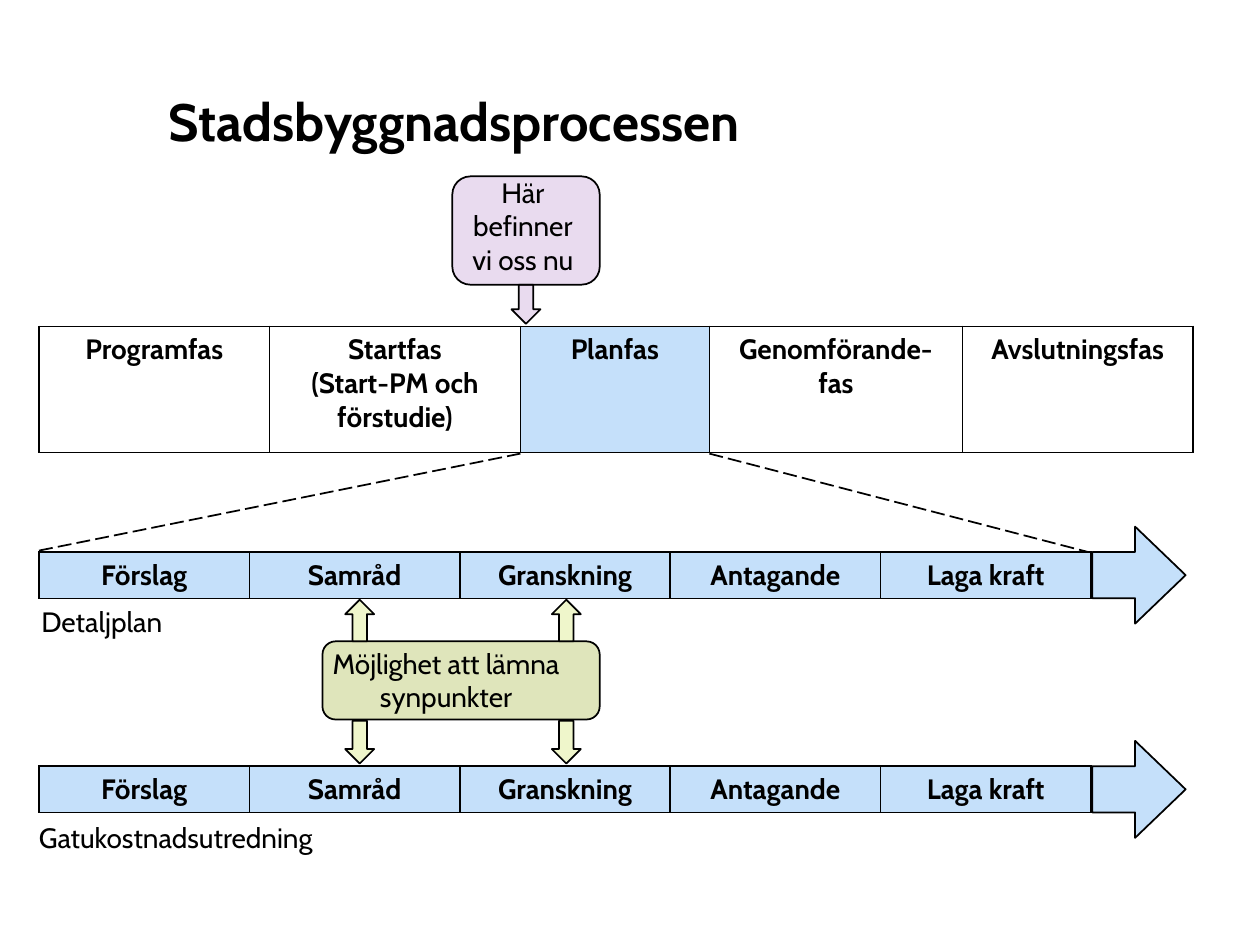
from lxml import etree
from pptx import Presentation
from pptx.dml.color import RGBColor
from pptx.enum.dml import MSO_LINE
from pptx.enum.shapes import MSO_CONNECTOR, MSO_SHAPE as SHAPE
from pptx.enum.text import MSO_ANCHOR, PP_ALIGN as ALIGN
from pptx.oxml import parse_xml
from pptx.oxml.ns import nsdecls, qn
from pptx.util import Inches, Pt

BLACK = RGBColor(0x00, 0x00, 0x00)
BLUE = RGBColor(0xC5, 0xE0, 0xFA)
PURPLE = RGBColor(0xB8, 0x88, 0xCB)
OLIVE = RGBColor(0x97, 0xAC, 0x1E)
PALE_GREEN = RGBColor(0xEF, 0xF6, 0xCB)
TABLE_LEFT = 0.31
STEP_WIDTH = 1.67
PLAN_TOP, STREET_COST_TOP = 4.38, 6.08

presentation = Presentation()
presentation.slide_width = Inches(10)
presentation.slide_height = Inches(7.5)
slide = presentation.slides.add_slide(presentation.slide_layouts[6])


def add_outlined(kind, left, top, width, height, color, opacity=100):
    """Add a filled shape with a black outline; opacity is in percent."""
    shape = slide.shapes.add_shape(kind, Inches(left), Inches(top), Inches(width), Inches(height))
    shape.shadow.inherit = False
    shape.fill.solid()
    shape.fill.fore_color.rgb = color
    shape.line.color.rgb = BLACK
    shape.line.width = Pt(1)
    if opacity < 100:
        color_element = shape.fill._xPr.find(qn("a:solidFill"))[0]
        etree.SubElement(color_element, qn("a:alpha"), val=str(opacity * 1000))
    return shape


def write(paragraph, text, align=ALIGN.CENTER, size=16, bold=False):
    paragraph.alignment = align
    run = paragraph.add_run()
    run.text = text
    run.font.name = "Cabin"
    run.font.size = Pt(size)
    run.font.bold = bold
    run.font.color.rgb = BLACK


# Callouts and their arrows
add_outlined(SHAPE.ROUNDED_RECTANGLE, 3.59, 1.4, 1.17, 0.86, PURPLE, 30)
add_outlined(SHAPE.DOWN_ARROW, 4.06, 2.26, 0.23, 0.31, PURPLE, 30)
add_outlined(SHAPE.ROUNDED_RECTANGLE, 2.56, 5.09, 2.2, 0.62, OLIVE, 30)
for left in (2.74, 4.38):
    add_outlined(SHAPE.UP_ARROW, left, 4.76, 0.23, 0.33, PALE_GREEN)
    add_outlined(SHAPE.DOWN_ARROW, left, 5.72, 0.23, 0.34, PALE_GREEN)

# Arrowheads that end the two process bars
for bar_top in (PLAN_TOP, STREET_COST_TOP):
    arrow = add_outlined(SHAPE.RIGHT_ARROW, 8.67, bar_top - 0.2, 0.74, 0.77, BLUE)
    arrow.adjustments[0] = 0.476
    arrow.adjustments[1] = 0.542

# Title and labels
labels = [
    ("Stadsbyggnadsprocessen", 1.24, 0.3, 8.49, 1.25, ALIGN.LEFT, 30),
    ("Här befinner vi oss nu", 3.62, 1.34, 1.06, 0.91, ALIGN.CENTER, 16),
    ("Möjlighet att lämna synpunkter", 2.4, 5.08, 2.28, 0.64, ALIGN.CENTER, 16),
    ("Detaljplan", 0.23, 4.75, 1.17, 0.37, ALIGN.LEFT, 16),
    ("Gatukostnadsutredning", 0.21, 6.46, 2.48, 0.37, ALIGN.LEFT, 16),
]
for text, left, top, width, height, align, size in labels:
    box = slide.shapes.add_textbox(Inches(left), Inches(top), Inches(width), Inches(height))
    frame = box.text_frame
    frame.word_wrap = True
    is_title = size == 30
    if is_title:
        frame.vertical_anchor = MSO_ANCHOR.MIDDLE
        frame.paragraphs[0].line_spacing = Pt(40)
    write(frame.paragraphs[0], text, align, size, is_title)

# Dashed lines from the plan phase to its steps
for start_x, start_y, end_x, end_y in ((0.31, 4.37, 4.13, 3.6), (5.63, 3.6, 8.67, 4.39)):
    line = slide.shapes.add_connector(
        MSO_CONNECTOR.STRAIGHT, Inches(start_x), Inches(start_y), Inches(end_x), Inches(end_y)
    )
    line.line.color.rgb = BLACK
    line.line.width = Pt(1)
    line.line.dash_style = MSO_LINE.LONG_DASH
    etree.SubElement(line._element.spPr, qn("a:effectLst"))

# Phases and the steps of the two processes
phases = [
    ["Programfas"],
    ["Startfas", "(Start-PM och förstudie)"],
    ["Planfas"],
    ["Genomförande-fas"],
    ["Avslutningsfas"],
]
steps = [["Förslag"], ["Samråd"], ["Granskning"], ["Antagande"], ["Laga kraft"]]
step_names = [step[0] for step in steps]
tables = [
    (PLAN_TOP, 0.37, [STEP_WIDTH] * 5, steps, step_names),
    (2.59, 1, [1.83, 1.99, 1.5, 2.01, 1.83], phases, ["Planfas"]),
    (STREET_COST_TOP, 0.37, [STEP_WIDTH] * 5, steps, step_names),
]
for top, height, widths, contents, highlighted in tables:
    table = slide.shapes.add_table(
        1, len(widths), Inches(TABLE_LEFT), Inches(top), Inches(sum(widths)), Inches(height)
    ).table
    table.first_row = False
    table.horz_banding = False
    for column, width, cell, lines in zip(table.columns, widths, table.rows[0].cells, contents):
        column.width = Inches(width)
        for index, text in enumerate(lines):
            frame = cell.text_frame
            paragraph = frame.add_paragraph() if index else frame.paragraphs[0]
            write(paragraph, text, bold=True)
        properties = cell._tc.get_or_add_tcPr()
        for side in ("lnL", "lnR", "lnT", "lnB"):
            properties.append(parse_xml(
                f'<a:{side} {nsdecls("a")} w="{Pt(1)}"><a:solidFill>'
                f'<a:srgbClr val="{BLACK}"/></a:solidFill></a:{side}>'
            ))
        if lines[0] in highlighted:
            cell.fill.solid()
            cell.fill.fore_color.rgb = BLUE
        else:
            cell.fill.background()

presentation.save("out.pptx")
